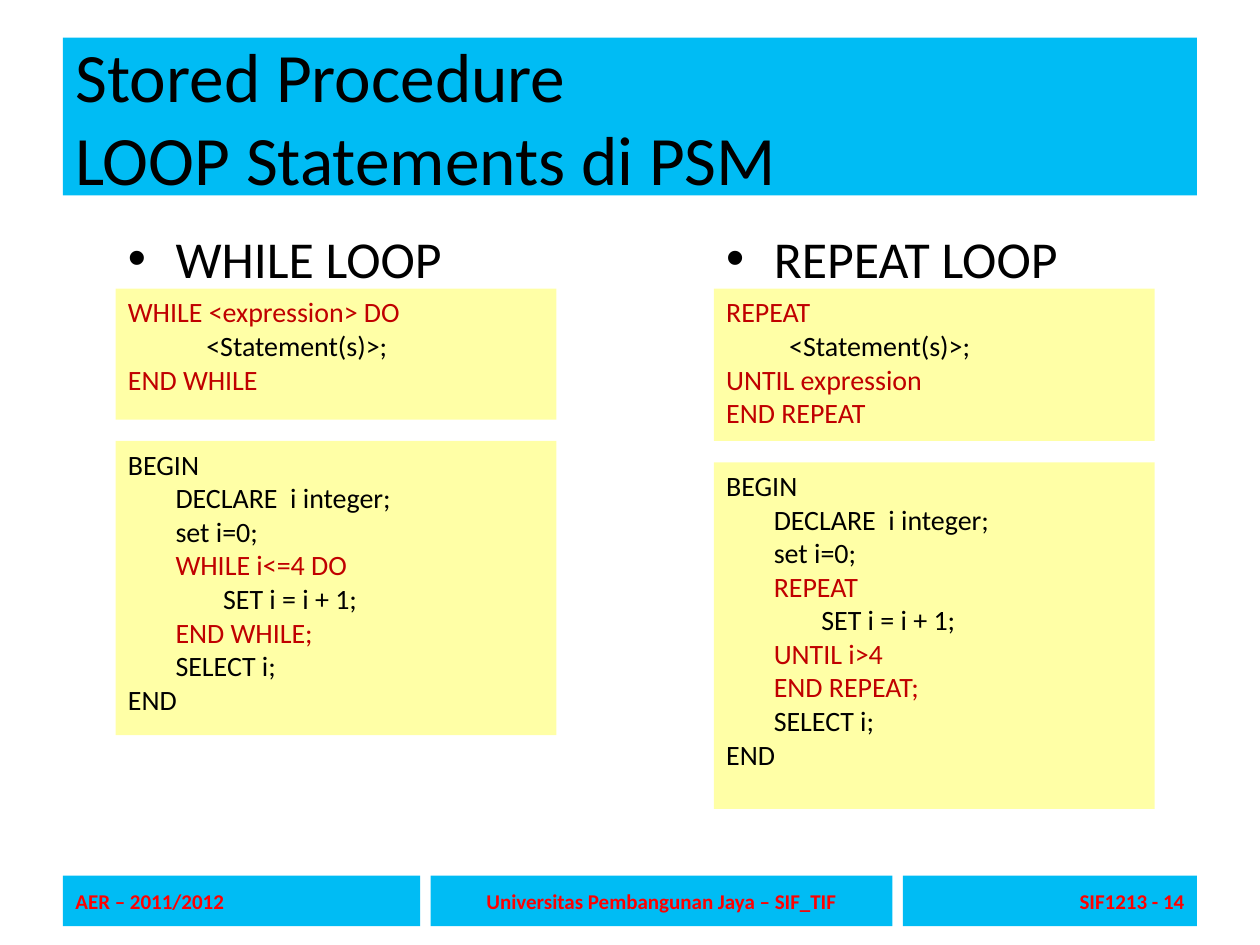
from lxml.etree import SubElement
from pptx import Presentation
from pptx.dml.color import RGBColor
from pptx.enum.shapes import MSO_SHAPE
from pptx.enum.text import MSO_ANCHOR, PP_ALIGN
from pptx.oxml.ns import qn
from pptx.util import Cm, Pt

BLACK = RGBColor(0x00, 0x00, 0x00)
KEYWORD = RGBColor(0xC0, 0x00, 0x00)
RED = RGBColor(0xFF, 0x00, 0x00)
CYAN = RGBColor(0x00, 0xBC, 0xF4)
YELLOW = RGBColor(0xFF, 0xFF, 0x00)

deck = Presentation()
deck.slide_width, deck.slide_height = Cm(25.4), Cm(19.05)
slide = deck.slides.add_slide(deck.slide_layouts[6])


def add_text(lines, left, top, width, height, size=16, fill=None, alpha=None, bold=False,
             align=PP_ALIGN.LEFT, anchor=MSO_ANCHOR.TOP, bullet=None, tabs=()):
    box = Cm(left), Cm(top), Cm(width), Cm(height)
    if fill is None:
        panel = slide.shapes.add_textbox(*box)
    else:
        panel = slide.shapes.add_shape(MSO_SHAPE.RECTANGLE, *box)
        panel.shadow.inherit = False
        panel.line.fill.background()
        panel.fill.solid()
        panel.fill.fore_color.rgb = fill
        if alpha:
            tint = panel.fill._xPr.find(qn("a:solidFill"))[0]
            SubElement(tint, qn("a:alpha"), val=str(alpha * 1000))
    frame = panel.text_frame
    frame.word_wrap = True
    frame.vertical_anchor = anchor
    for index, (line, color) in enumerate(lines):
        paragraph = frame.add_paragraph() if index else frame.paragraphs[0]
        paragraph.text = line
        paragraph.alignment = align
        properties = paragraph._p.get_or_add_pPr()
        if bullet:
            properties.set("marL", str(Cm(0.96)))
            properties.set("indent", str(-Cm(0.96)))
            SubElement(properties, qn("a:buFont"), typeface="Arial")
            SubElement(properties, qn("a:buChar"), char=bullet)
        if tabs:
            stops = SubElement(properties, qn("a:tabLst"))
            for stop in tabs:
                SubElement(stops, qn("a:tab"), pos=str(Cm(stop)), algn="l")
        for run in paragraph.runs:
            run.font.name = "Calibri"
            run.font.size = Pt(size)
            run.font.bold = bold
            run.font.color.rgb = color


add_text([("Stored Procedure\vLOOP Statements di PSM", BLACK)], 1.27, 0.76, 22.86, 3.18,
         size=39.6, fill=CYAN, anchor=MSO_ANCHOR.MIDDLE)

for footer, left, width, align in [
    ("AER – 2011/2012", 1.27, 7.2, PP_ALIGN.LEFT),
    ("Universitas Pembangunan Jaya – SIF_TIF", 8.68, 9.31, PP_ALIGN.CENTER),
    ("SIF1213 - 14", 18.2, 5.93, PP_ALIGN.RIGHT),
]:
    add_text([(footer, RED)], left, 17.65, width, 1.02, size=12, fill=CYAN, bold=True,
             align=align, anchor=MSO_ANCHOR.MIDDLE)

while_syntax = [
    ("WHILE <expression> DO", KEYWORD),
    ("\t<Statement(s)>;", BLACK),
    ("END WHILE", KEYWORD),
]
repeat_syntax = [
    ("REPEAT", KEYWORD),
    ("\t<Statement(s)>;", BLACK),
    ("UNTIL expression", KEYWORD),
    ("END REPEAT", KEYWORD),
]
opening = [("BEGIN", BLACK), ("\tDECLARE  i integer;", BLACK), ("\tset i=0;", BLACK)]
increment = [("\t\tSET i = i + 1;", BLACK)]
closing = [("\tSELECT i;", BLACK), ("END", BLACK)]
while_body = [("\tWHILE i<=4 DO", KEYWORD), *increment, ("\tEND WHILE;", KEYWORD)]
repeat_body = [("\tREPEAT", KEYWORD), *increment, ("\tUNTIL i>4", KEYWORD),
               ("\tEND REPEAT;", KEYWORD)]

SYNTAX_TOP, PANEL_WIDTH, PANEL_GAP = 5.82, 8.89, 0.43
for heading, left, syntax, syntax_height, syntax_tab, body, example_height in [
    ("WHILE LOOP", 2.33, while_syntax, 2.64, 1.58, while_body, 5.93),
    ("REPEAT LOOP", 14.39, repeat_syntax, 3.07, 1.27, repeat_body, 6.99),
]:
    add_text([(heading, BLACK)], left, 4.45, PANEL_WIDTH, 1.37, size=29.6, bullet="•")
    add_text(syntax, left, SYNTAX_TOP, PANEL_WIDTH, syntax_height,
             fill=YELLOW, alpha=35, tabs=[syntax_tab])
    add_text(opening + body + closing, left, SYNTAX_TOP + syntax_height + PANEL_GAP,
             PANEL_WIDTH, example_height, fill=YELLOW, alpha=35,
             tabs=[0.96, 1.92, 2.85, 3.81])

deck.save("out.pptx")
